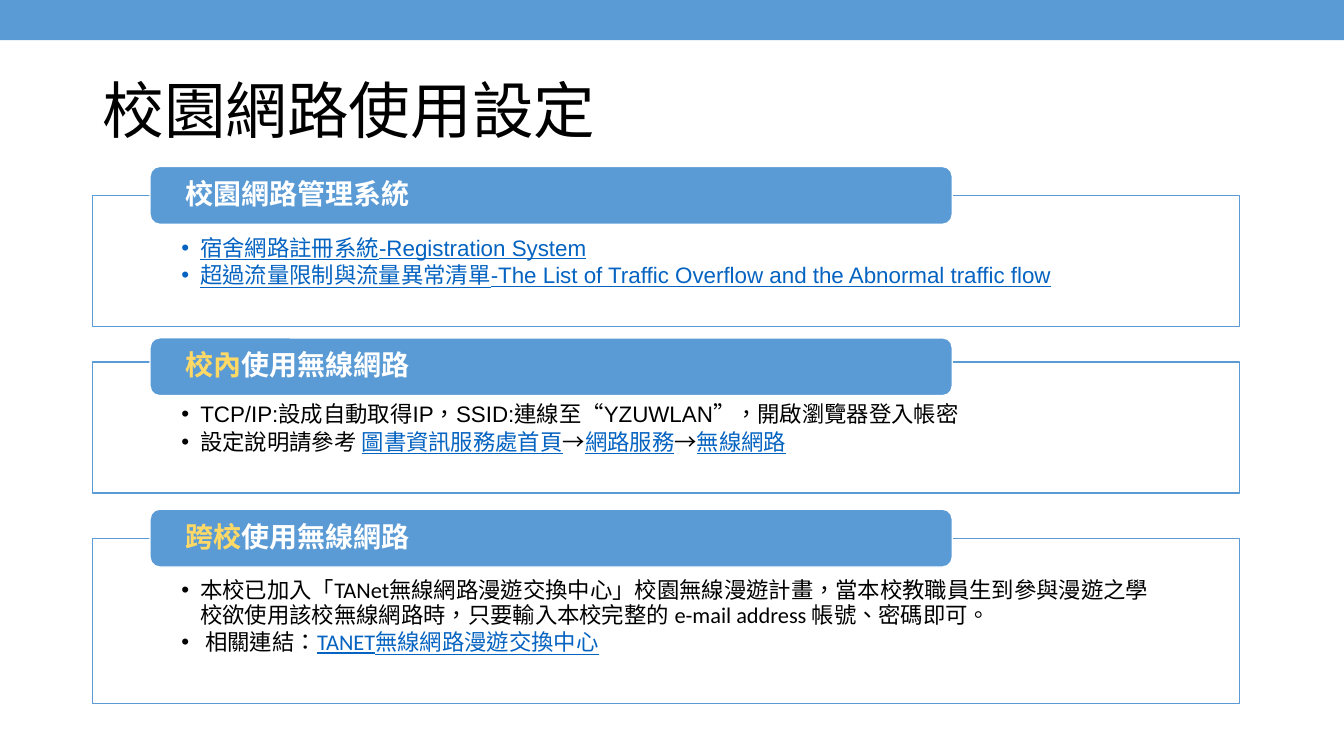
from lxml import etree
from pptx import Presentation
from pptx.dml.color import RGBColor
from pptx.enum.lang import MSO_LANGUAGE_ID
from pptx.enum.shapes import MSO_SHAPE
from pptx.enum.text import MSO_ANCHOR, MSO_AUTO_SIZE, PP_ALIGN
from pptx.oxml.ns import qn
from pptx.util import Pt

RECTANGLE = MSO_SHAPE.RECTANGLE
ROUNDED = MSO_SHAPE.ROUNDED_RECTANGLE
TOP, MIDDLE = MSO_ANCHOR.TOP, MSO_ANCHOR.MIDDLE
NO_AUTOFIT = MSO_AUTO_SIZE.NONE
LEFT = PP_ALIGN.LEFT
CHINESE = MSO_LANGUAGE_ID.TRADITIONAL_CHINESE
COMPARISON_LAYOUT = 4

COLORS = {
    "blue": "5B9BD5",
    "white": "FFFFFF",
    "text": "000000",
    "link": "0563C1",
    "accent": "FFD966",
}

# Each run is (text, colour name); each item is a list of runs
SECTIONS = [
    {
        "heading": [("校園網路管理系統", "white")],
        "top": 139.7, "height": 93.6, "font": "Arial",
        "items": [
            [("宿舍網路註冊系統-Registration System", "link")],
            [("超過流量限制與流量異常清單-The List of Traffic Overflow "
              "and the Abnormal traffic flow", "link")],
        ],
    },
    {
        "heading": [("校內", "accent"), ("使用無線網路", "white")],
        "top": 258.7, "height": 93.6, "font": "Arial",
        "items": [
            [("TCP/IP:設成自動取得IP，SSID:連線至“YZUWLAN”，開啟瀏覽器登入帳密", "text")],
            [("設定說明請參考 ", "text"), ("圖書資訊服務處首頁", "link"), ("→", "text"),
             ("網路服務", "link"), ("→", "text"), ("無線網路", "link")],
        ],
    },
    {
        "heading": [("跨校", "accent"), ("使用無線網路", "white")],
        "top": 384.5, "height": 118, "font": "Calibri",
        "items": [
            [("本校已加入「TANet無線網路漫遊交換中心」校園無線漫遊計畫，"
              "當本校教職員生到參與漫遊之學校欲使用該校無線網路時，"
              "只要輸入本校完整的 e-mail address 帳號、密碼即可。", "text")],
            [(" 相關連結：", "text"), ("TANET無線網路漫遊交換中心", "link")],
        ],
    },
]
HEADING_TOP, HEADING_PITCH = 118.9, 122.4


def rgb(name):
    return RGBColor.from_string(COLORS[name])


def place(shape, left, top, width, height):
    shape.left, shape.top = Pt(left), Pt(top)
    shape.width, shape.height = Pt(width), Pt(height)


def set_frame(shape, margins, anchor):
    frame = shape.text_frame
    frame.word_wrap = True
    frame.auto_size = NO_AUTOFIT
    frame.vertical_anchor = anchor
    (frame.margin_left, frame.margin_top,
     frame.margin_right, frame.margin_bottom) = map(Pt, margins)
    return frame


def paint(shape, fill, line=None):
    shape.fill.solid()
    shape.fill.fore_color.rgb = rgb(fill)
    if line:
        shape.line.color.rgb = rgb(line)
        shape.line.width = Pt(1)
    else:
        shape.line.fill.background()


def add_bullet(paragraph, indent=13.5):
    properties = paragraph._p.get_or_add_pPr()
    properties.set("marL", str(Pt(indent)))
    properties.set("indent", str(-Pt(indent)))
    font = etree.SubElement(properties, qn("a:buFont"))
    font.set("typeface", "Arial")
    bullet = etree.SubElement(properties, qn("a:buChar"))
    bullet.set("char", "•")


def write(paragraph, runs, size, font="Arial", bold=False, after=0):
    paragraph.alignment = LEFT
    paragraph.line_spacing = 0.9
    paragraph.space_before = Pt(0)
    paragraph.space_after = Pt(after)
    for text, color in runs:
        run = paragraph.add_run()
        run.text = text
        run.font.name = font
        run.font.size = Pt(size)
        run.font.bold = bold
        run.font.language_id = CHINESE
        run.font.color.rgb = rgb(color)
        if color == "link":
            run.font.underline = True


def add_block(slide, kind, box, fill, line=None):
    shape = slide.shapes.add_shape(kind, *map(Pt, box))
    shape.shadow.inherit = False
    paint(shape, fill, line)
    return shape


def fill_panel(panel, section):
    place(panel, 66.2, section["top"], 819.4, section["height"])
    paint(panel, "white", "blue")
    frame = set_frame(panel, (63.4, 29.5, 63.4, 8.6), TOP)
    for index, runs in enumerate(section["items"]):
        paragraph = frame.add_paragraph() if index else frame.paragraphs[0]
        add_bullet(paragraph)
        write(paragraph, runs, size=16, font=section["font"], after=2.5)


def add_heading(slide, runs, top):
    shape = add_block(slide, ROUNDED, (107.2, top, 573, 41.3), "blue", "white")
    frame = set_frame(shape, (23, 0, 23, 0), MIDDLE)
    write(frame.paragraphs[0], runs, size=20, bold=True)


def main():
    presentation = Presentation()
    presentation.slide_width, presentation.slide_height = Pt(960), Pt(540)
    slide = presentation.slides.add_slide(
        presentation.slide_layouts[COMPARISON_LAYOUT])

    # Top band and title
    add_block(slide, RECTANGLE, (0, 0, 960, 28.8), "blue")
    title = slide.shapes.title
    place(title, 66, 28.8, 828, 104.4)
    frame = set_frame(title, (7.2, 3.6, 7.2, 3.6), MIDDLE)
    write(frame.paragraphs[0], [("校園網路使用設定", "text")], size=44)

    # Framed lists with overlapping headings
    bodies = [holder for holder in slide.placeholders
              if holder.placeholder_format.idx > 0]
    for index, (panel, section) in enumerate(zip(bodies, SECTIONS)):
        fill_panel(panel, section)
        add_heading(slide, section["heading"], HEADING_TOP + index * HEADING_PITCH)

    # Unused placeholders
    for holder in bodies[len(SECTIONS):]:
        holder.element.getparent().remove(holder.element)

    presentation.save("out.pptx")


if __name__ == "__main__":
    main()
